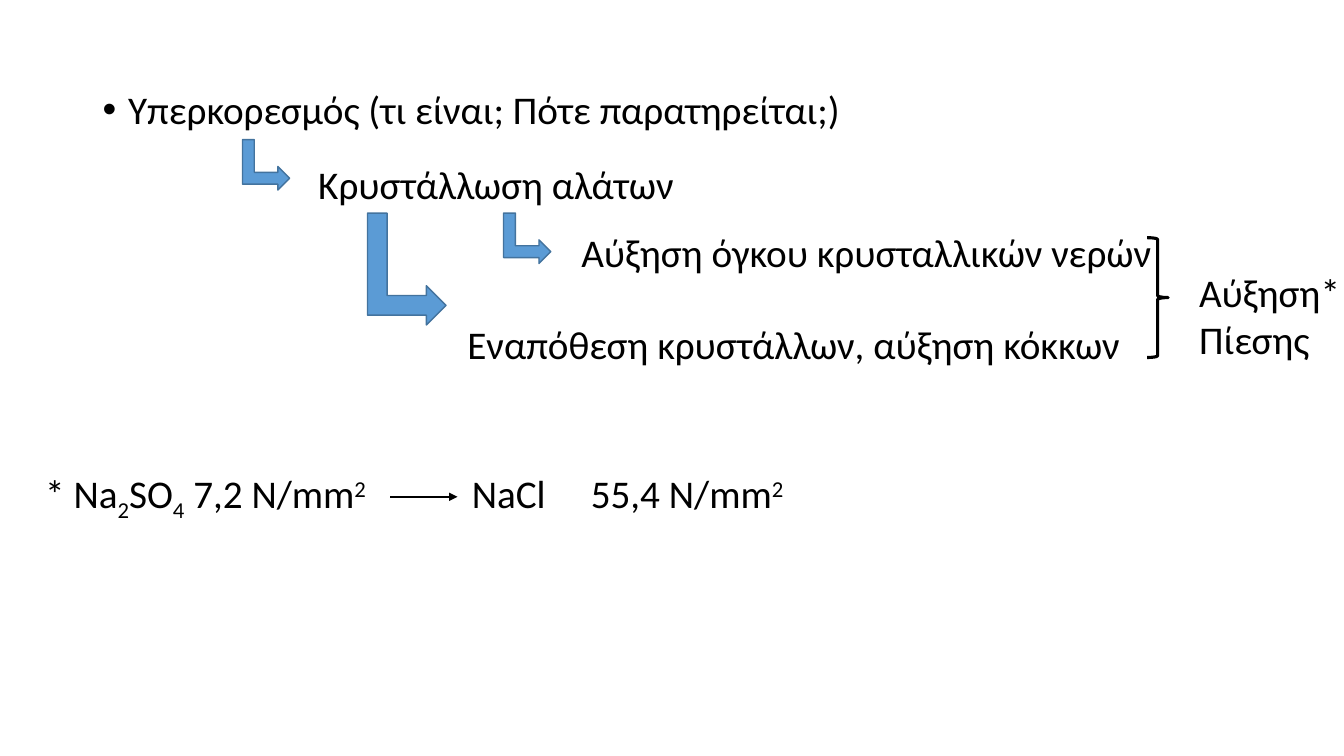
from dataclasses import dataclass

import pptx
import pptx.dml.color
import pptx.enum.shapes
import pptx.oxml.ns
import pptx.presentation
import pptx.shapes.autoshape
import pptx.slide
import pptx.util
from lxml import etree

Cm = pptx.util.Cm
Pt = pptx.util.Pt
Color = pptx.dml.color.RGBColor
Kind = pptx.enum.shapes.MSO_SHAPE
qn = pptx.oxml.ns.qn

BLACK = Color(0x00, 0x00, 0x00)
BLUE = Color(0x5B, 0x9B, 0xD5)
EDGE = Color(0x43, 0x73, 0x9E)
INDENT = Cm(0.64)


@dataclass(frozen=True)
class Box:
    left: float
    top: float
    width: float
    height: float

    def frame(self) -> tuple[int, int, int, int]:
        return Cm(self.left), Cm(self.top), Cm(self.width), Cm(self.height)


@dataclass(frozen=True)
class Label:
    box: Box
    words: tuple[tuple[str, int], ...]
    bullet: bool = False
    tabs: tuple[float, ...] = ()


LABELS = (
    Label(Box(2.34, 2.16, 29.21, 14.99),
          (("Υπερκορεσμός (τι είναι; Πότε παρατηρείται;)", 0),), bullet=True),
    Label(Box(7.77, 3.91, 9.8, 1.45), (("Κρυστάλλωση αλάτων", 0),)),
    Label(Box(14.4, 5.64, 15.04, 1.45), (("Αύξηση όγκου κρυσταλλικών νερών", 0),)),
    Label(Box(11.53, 7.95, 17.37, 1.45), (("Εναπόθεση κρυστάλλων, αύξηση κόκκων", 0),)),
    Label(Box(29.97, 6.63, 4.09, 2.64), (("Αύξηση* Πίεσης", 0),)),
    Label(Box(0.89, 11.71, 19.53, 1.45),
          (("* Na", 0), ("2", -25), ("SO", 0), ("4", -25), (" 7,2 N/mm", 0),
           ("2", 30), ("\tNaCl\t55,4 N/mm", 0), ("2", 30)), tabs=(10.75, 13.75)),
)

BENDS = (
    Box(6.07, 3.56, 1.27, 1.19),
    Box(12.65, 5.41, 1.27, 1.19),
    Box(8.84, 5.79, 2.82, 1.98),
)

BRACE = Box(28.91, 5.99, 0.53, 3.02)


def draw_label(slide: pptx.slide.Slide, label: Label) -> None:
    frame = slide.shapes.add_textbox(*label.box.frame()).text_frame
    frame.word_wrap = True
    para = frame.paragraphs[0]
    props = para._p.get_or_add_pPr()
    if label.bullet:
        para.line_spacing = 0.9
        props.set("marL", str(INDENT))
        props.set("indent", str(-INDENT))
        etree.SubElement(props, qn("a:buFont"), typeface="Arial")
        etree.SubElement(props, qn("a:buChar"), char="•")
    if label.tabs:
        stops = etree.SubElement(props, qn("a:tabLst"))
        for stop in label.tabs:
            etree.SubElement(stops, qn("a:tab"), pos=str(Cm(stop)), algn="l")
    for text, shift in label.words:
        run = para.add_run()
        run.text = text
        run.font.name = "Calibri"
        run.font.size = Pt(28)
        run.font.color.rgb = BLACK
        if shift:
            run.font._element.set("baseline", str(shift * 1000))


def draw_shape(slide: pptx.slide.Slide, kind: Kind, box: Box, edge: Color,
               weight: float) -> pptx.shapes.autoshape.Shape:
    shape = slide.shapes.add_shape(kind, *box.frame())
    shape.shadow.inherit = False
    shape.line.color.rgb = edge
    shape.line.width = Pt(weight)
    return shape


def draw_bend(slide: pptx.slide.Slide, box: Box) -> None:
    bend = draw_shape(slide, Kind.BENT_UP_ARROW, box, EDGE, 1)
    bend.rotation = 90
    bend.fill.solid()
    bend.fill.fore_color.rgb = BLUE


def draw_arrow(slide: pptx.slide.Slide, start: float, end: float, level: float) -> None:
    arrow = slide.shapes.add_connector(
        pptx.enum.shapes.MSO_CONNECTOR.STRAIGHT,
        Cm(start), Cm(level), Cm(end), Cm(level))
    arrow.line.color.rgb = BLACK
    arrow.line.width = Pt(1.5)
    etree.SubElement(arrow.line._get_or_add_ln(), qn("a:tailEnd"), type="triangle")
    etree.SubElement(arrow._element.spPr, qn("a:effectLst"))


def main() -> None:
    deck = pptx.Presentation()
    deck.slide_width = Cm(33.87)
    deck.slide_height = Cm(19.05)
    slide = deck.slides.add_slide(deck.slide_layouts[6])
    for label in LABELS:
        draw_label(slide, label)
    for box in BENDS:
        draw_bend(slide, box)
    brace = draw_shape(slide, Kind.RIGHT_BRACE, BRACE, BLACK, 2.25)
    brace.fill.background()
    draw_arrow(slide, 9.83, 11.53, 12.52)
    deck.save("out.pptx")


if __name__ == "__main__":
    main()
